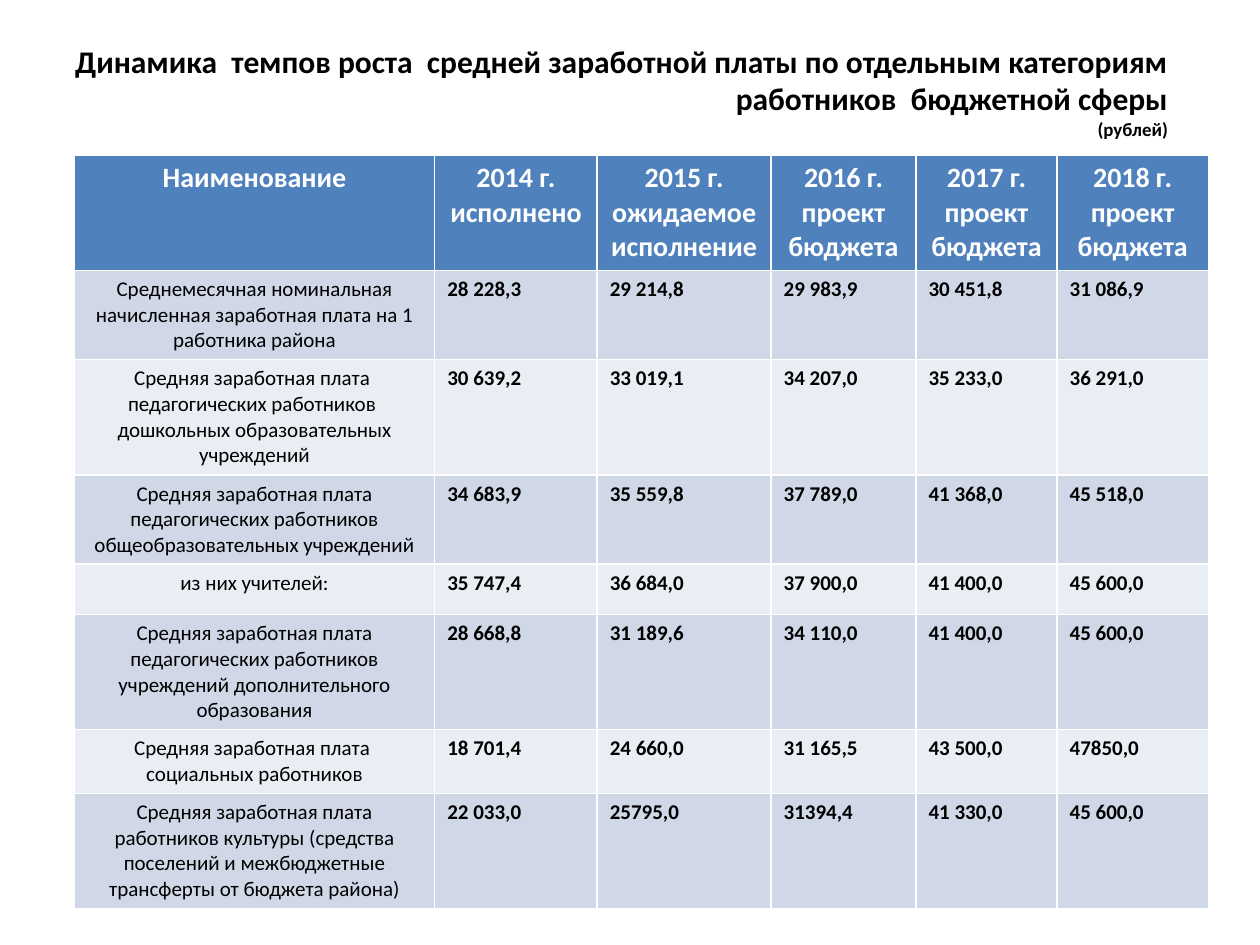
from pptx import Presentation
from pptx.dml.color import RGBColor
from pptx.enum.text import MSO_ANCHOR, MSO_AUTO_SIZE, PP_ALIGN
from pptx.util import Inches, Pt


def color(hex_code):
    return RGBColor.from_string(hex_code)


def write(paragraph, text, size, hex_code, bold, align):
    paragraph.alignment = align
    run = paragraph.add_run()
    run.text = text
    run.font.name = "Calibri"
    run.font.size = Pt(size)
    run.font.bold = bold
    run.font.color.rgb = color(hex_code)


header = ["Наименование", "2014 г. исполнено", "2015 г. ожидаемое исполнение",
          "2016 г. проект бюджета", "2017 г. проект бюджета", "2018 г. проект бюджета"]
salaries = [
    ["Среднемесячная номинальная начисленная заработная плата на 1 работника района",
     "28 228,3", "29 214,8", "29 983,9", "30 451,8", "31 086,9"],
    ["Средняя заработная плата  педагогических работников  дошкольных образовательных учреждений",
     "30 639,2", "33 019,1", "34 207,0", "35 233,0", "36 291,0"],
    ["Средняя заработная плата педагогических работников общеобразовательных учреждений",
     "34 683,9", "35 559,8", "37 789,0", "41 368,0", "45 518,0"],
    ["из них учителей:",
     "35 747,4", "36 684,0", "37 900,0", "41 400,0", "45 600,0"],
    ["Средняя заработная плата педагогических работников учреждений дополнительного образования",
     "28 668,8", "31 189,6", "34 110,0", "41 400,0", "45 600,0"],
    ["Средняя заработная плата  социальных работников",
     "18 701,4", "24 660,0", "31 165,5", "43 500,0", "47850,0"],
    ["Средняя заработная плата работников культуры (средства поселений и межбюджетные "
     "трансферты от бюджета района)",
     "22 033,0", "25795,0", "31394,4", "41 330,0", "45 600,0"],
]
column_widths = [2.86, 1.29, 1.38, 1.15, 1.12, 1.2]
row_heights = [0.89, 0.69, 0.89, 0.69, 0.4, 0.89, 0.49, 0.89]

prs = Presentation()
prs.slide_width, prs.slide_height = Inches(10), Inches(7.5)
slide = prs.slides.add_slide(prs.slide_layouts[5])

heading = slide.shapes.title
heading.left, heading.top = Inches(0.37), Inches(0.21)
heading.width, heading.height = Inches(9), Inches(1.02)
heading_text = heading.text_frame
heading_text.word_wrap = True
heading_text.auto_size = MSO_AUTO_SIZE.NONE
heading_text.vertical_anchor = MSO_ANCHOR.MIDDLE
write(heading_text.paragraphs[0],
      "Динамика  темпов роста  средней заработной платы по отдельным категориям "
      "работников  бюджетной сферы", 18, "000000", True, PP_ALIGN.RIGHT)
write(heading_text.add_paragraph(), "(рублей)", 10.8, "000000", True, PP_ALIGN.RIGHT)

salary_table = slide.shapes.add_table(
    len(row_heights), len(column_widths),
    Inches(0.59), Inches(1.23), Inches(9), Inches(5.9)).table
for column, width in zip(salary_table.columns, column_widths):
    column.width = Inches(width)
for row, height in zip(salary_table.rows, row_heights):
    row.height = Inches(height)

for r, values in enumerate([header] + salaries):
    for c, value in enumerate(values):
        cell = salary_table.cell(r, c)
        cell.fill.solid()
        if r == 0:
            cell.fill.fore_color.rgb = color("4F81BD")
            size, ink = 16, "FFFFFF"
        else:
            cell.fill.fore_color.rgb = color("D0D8E8" if r % 2 else "E9EDF4")
            size, ink = 12, "000000"
        centred = r == 0 or c == 0
        write(cell.text_frame.paragraphs[0], value, size, ink, r == 0 or c > 0,
              PP_ALIGN.CENTER if centred else PP_ALIGN.LEFT)

prs.save("out.pptx")
